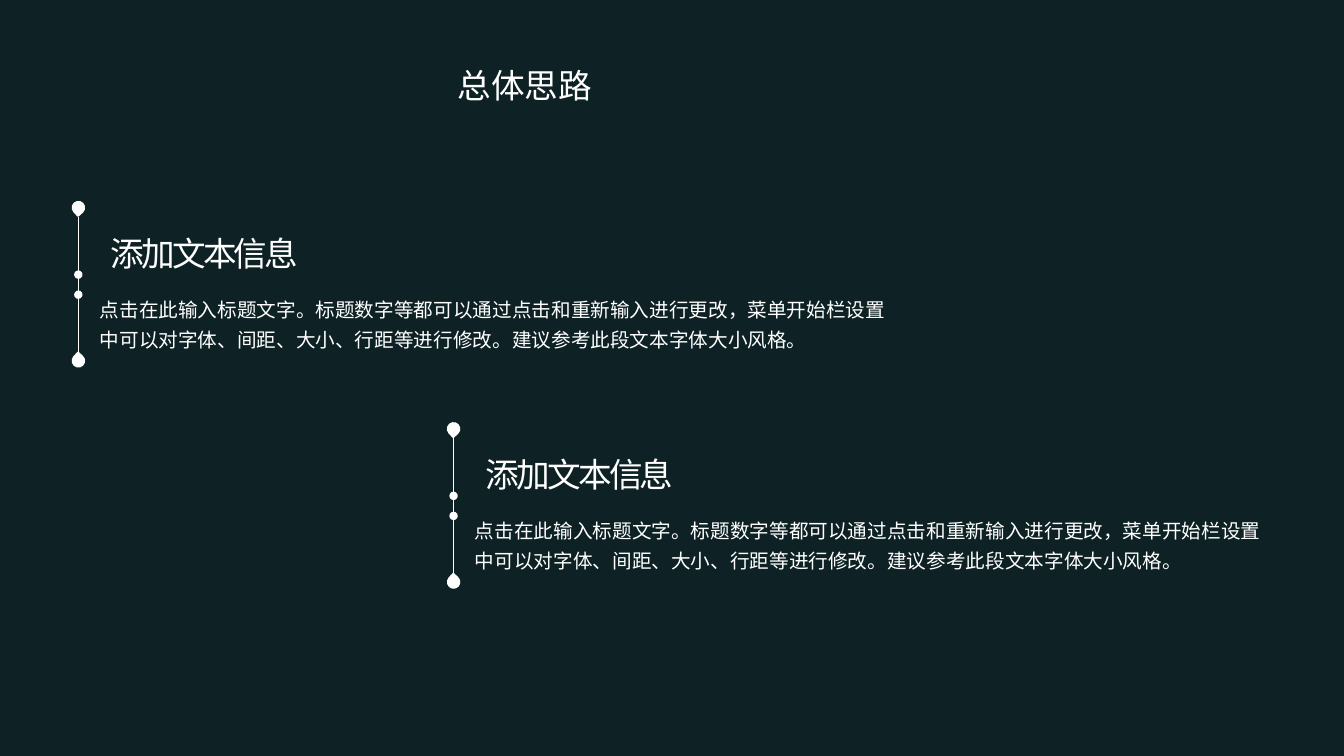
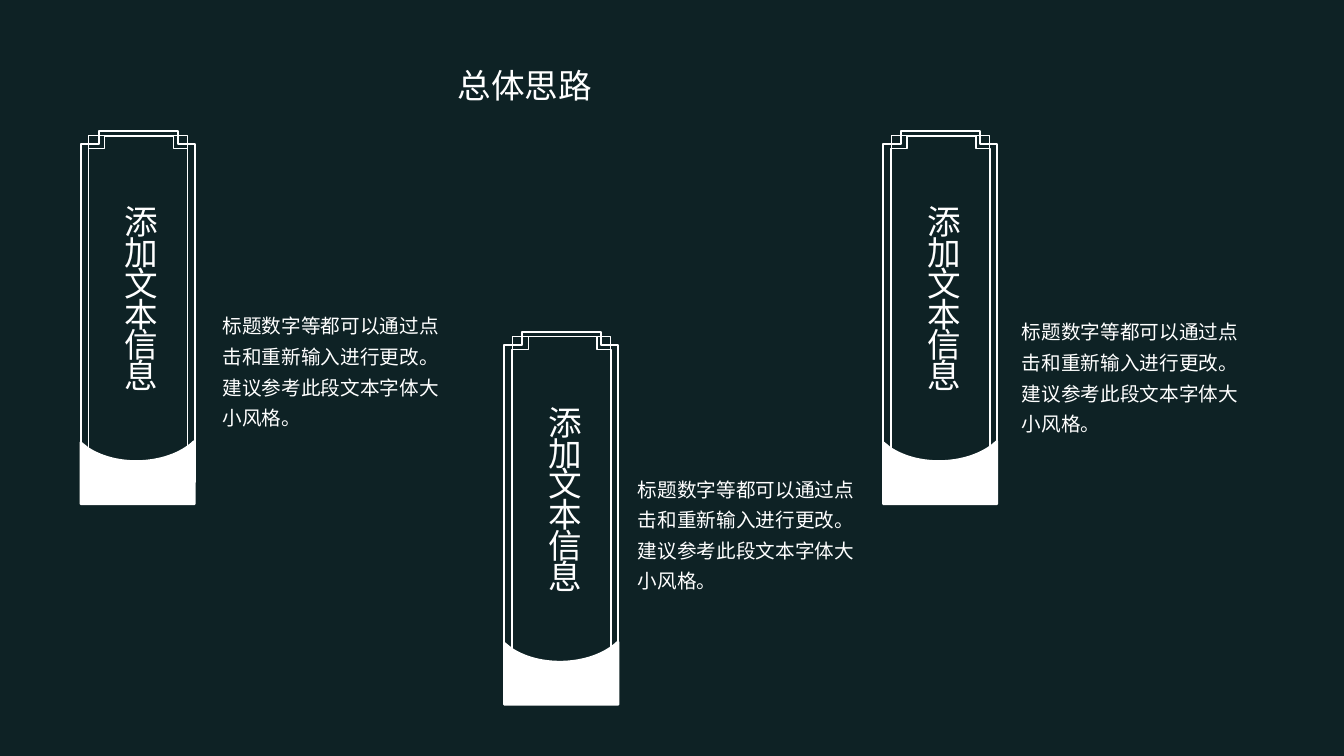
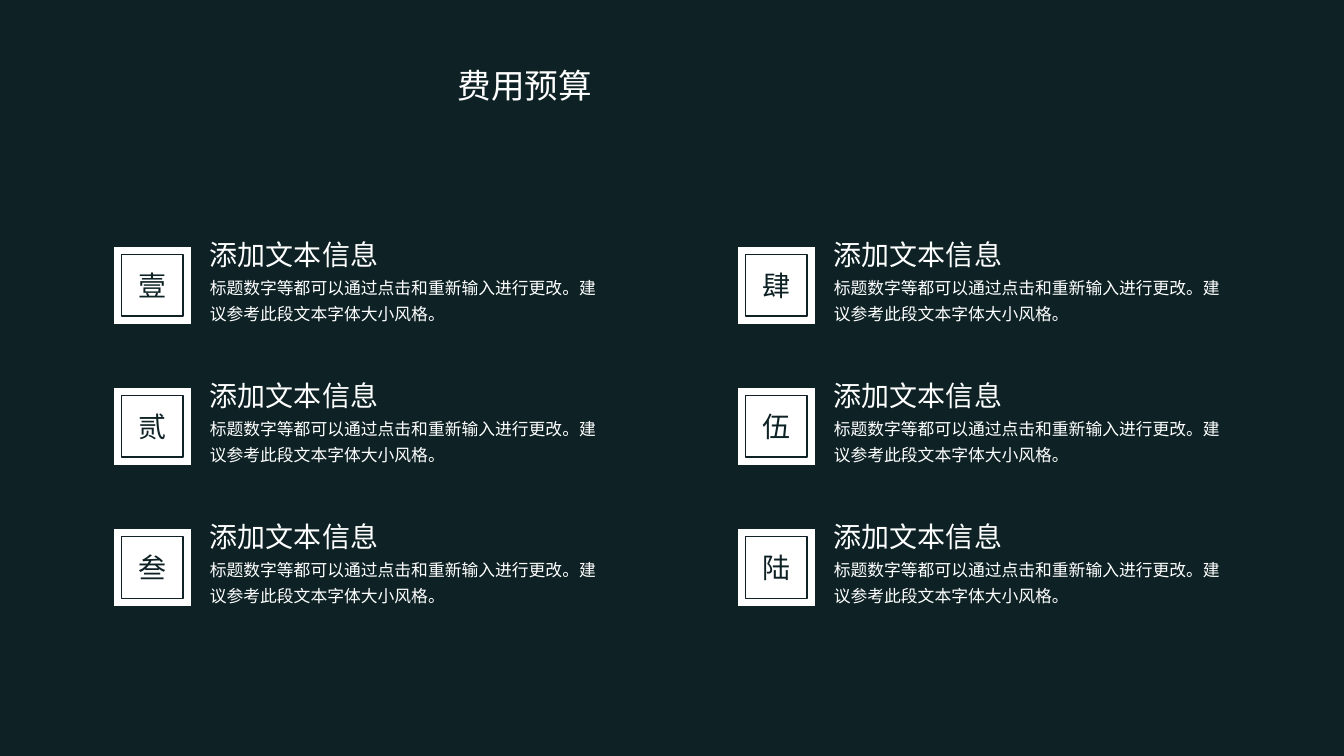
import itertools

import pptx
import pptx.dml.color
import pptx.enum.shapes
import pptx.enum.text
import pptx.oxml
import pptx.oxml.ns
import pptx.util

Pt = pptx.util.Pt
SHAPE = pptx.enum.shapes.MSO_SHAPE
ALIGN = pptx.enum.text.PP_ALIGN
ANCHOR = pptx.enum.text.MSO_ANCHOR
AUTO = pptx.enum.text.MSO_AUTO_SIZE

COLORS = {"night": "0E2225", "white": "FFFFFF"}
HEAD_FONT = "Noto Sans CJK JP"
BODY_FONT = "Noto Sans CJK SC"

HEADING = "添加文本信息"
SHORT_BODY = "标题数字等都可以通过点击和重新输入进行更改。建议参考此段文本字体大小风格。"
LONG_BODY = (
    "点击在此输入标题文字。标题数字等都可以通过点击和重新输入进行更改，"
    "菜单开始栏设置中可以对字体、间距、大小、行距等进行修改。"
    "建议参考此段文本字体大小风格。"
)

IDEAS = {"title": "总体思路", "origins": [(56, 144), (324, 302)]}
PLAQUES = {
    "title": "总体思路",
    "items": [
        ((57.6, 93.6), (152, 216)),
        ((360.2, 236.9), (448.6, 332.6)),
        ((630.9, 93.6), (722.9, 220.3)),
    ],
}
BUDGET = {"title": "费用预算", "columns": ["壹贰叁", "肆伍陆"]}


def rgb(name):
    return pptx.dml.color.RGBColor.from_string(COLORS[name])


def write(sp, text, size, font, color="white", align=None, spacing=None, line_spacing=None):
    p = sp.text_frame.paragraphs[0]
    p.text = text
    p.alignment = align
    p.line_spacing = line_spacing
    p.font.size = Pt(size)
    p.font.name = font
    p.font.color.rgb = rgb(color)
    props = p._p.pPr.find(pptx.oxml.ns.qn("a:defRPr"))
    ea = pptx.oxml.parse_xml(f'<a:ea {pptx.oxml.ns.nsdecls("a")} typeface="{font}"/>')
    props.find(pptx.oxml.ns.qn("a:latin")).addnext(ea)
    if spacing:
        props.set("spc", str(spacing * 100))


def add_text(slide, box, text, size, font, wrap=True, vertical=False, **style):
    sp = slide.shapes.add_textbox(*map(Pt, box))
    tf = sp.text_frame
    tf.word_wrap = wrap
    tf.auto_size = AUTO.SHAPE_TO_FIT_TEXT
    if vertical:
        tf._txBody.bodyPr.set("vert", "eaVert")
    write(sp, text, size, font, **style)


def paint(sp, fill, line, width):
    sp.shadow.inherit = False
    if fill:
        sp.fill.solid()
        sp.fill.fore_color.rgb = rgb(fill)
    else:
        sp.fill.background()
    sp.line.color.rgb = rgb(line)
    sp.line.width = Pt(width)


def add_shape(slide, kind, box, fill="white", line="white", width=1, rotation=0):
    sp = slide.shapes.add_shape(kind, *map(Pt, box))
    sp.rotation = rotation
    paint(sp, fill, line, width)
    return sp


def add_outline(slide, points, fill, width):
    points = [(Pt(x), Pt(y)) for x, y in points]
    builder = slide.shapes.build_freeform(*points[0])
    builder.add_line_segments(points[1:], close=True)
    paint(builder.convert_to_shape(), fill, "white", width)


def add_slide(prs, title):
    slide = prs.slides.add_slide(prs.slide_layouts.get_by_name("Title Only"))
    tf = slide.shapes.title.text_frame
    tf.vertical_anchor = ANCHOR.TOP
    tf.auto_size = AUTO.NONE
    write(slide.shapes.title, title, 24, HEAD_FONT, align=ALIGN.JUSTIFY)
    return slide


def add_idea(slide, x, y):
    for dy, rotation in ((0, 137.4), (109.4, 312.6)):
        add_shape(slide, SHAPE.TEAR, (x - 4.32, y + dy, 8.64, 8.64), rotation=rotation)
    for dy in (49.7, 64):
        add_shape(slide, SHAPE.OVAL, (x - 2.5, y + dy, 5, 5))
    rod = slide.shapes.add_connector(
        pptx.enum.shapes.MSO_CONNECTOR.STRAIGHT, Pt(x), Pt(y + 10.8), Pt(x), Pt(y + 107.3)
    )
    rod.line.color.rgb = rgb("white")
    rod.line.width = Pt(0.5)
    rod._element.spPr.append(
        pptx.oxml.parse_xml(f'<a:effectLst {pptx.oxml.ns.nsdecls("a")}/>')
    )
    add_text(slide, (x + 8.2, y + 60, 576, 49.7), LONG_BODY, 14, BODY_FONT, line_spacing=1.3)
    add_text(slide, (x + 16, y + 18.5, 150, 36), HEADING, 24, HEAD_FONT, spacing=-2)


def notched(x, y, w, h, left, right, drop):
    r, b = x + w, y + h
    return [
        (r, y + drop), (r, b - drop), (r - right, b - drop), (r - right, b),
        (x + left, b), (x + left, b - drop), (x, b - drop), (x, y + drop),
        (x + left, y + drop), (x + left, y), (r - right, y), (r - right, y + drop),
    ]


def bezier(a, b, c, d, steps=16):
    for t in (i / steps for i in range(steps + 1)):
        u = 1 - t
        yield tuple(
            u**3 * p + 3 * u * u * t * q + 3 * u * t * t * r + t**3 * s
            for p, q, r, s in zip(a, b, c, d)
        )


def add_plaque(slide, x, y):
    w, h = 81.4, 260
    inner = (x + 5.6, y + 3.5, w - 10.8, h - 7)
    add_outline(slide, notched(x, y, w, h, 13, 12, 9.4), None, 1.5)
    add_shape(slide, SHAPE.RECTANGLE, inner, fill=None, width=0.75)
    add_outline(slide, notched(*inner, 11.5, 10, 9.2), None, 1)
    base = [(w, 0), (w, 44.8), (0, 44.8), (0, 0.8)]
    base += bezier((5, 4.8), (13.7, 10.6), (25.9, 14.3), (39.6, 14.3))
    base += bezier((39.6, 14.3), (56.9, 14.3), (72, 8.6), (80.6, 0.4))
    add_outline(slide, [(x + dx, y + 221.6 + dy) for dx, dy in base], "white", 1.5)
    add_text(slide, (x + 16.6, y + 45.8, 44, 140.4), HEADING, 24, HEAD_FONT,
             wrap=False, vertical=True, spacing=-2)


def add_budget_item(slide, x, y, numeral):
    add_shape(slide, SHAPE.RECTANGLE, (x, y, 56, 56), line="night")
    tile = add_shape(slide, SHAPE.RECTANGLE, (x + 6, y + 6, 44, 44), line="night")
    tile.text_frame.vertical_anchor = ANCHOR.MIDDLE
    write(tile, numeral, 20, HEAD_FONT, color="night", align=ALIGN.CENTER)
    add_text(slide, (x + 62, y - 10, 135.4, 31.7), HEADING, 20, HEAD_FONT, wrap=False)
    add_text(slide, (x + 62, y + 14.4, 296.6, 43.2), SHORT_BODY, 12, BODY_FONT, line_spacing=1.3)


def main():
    prs = pptx.Presentation()
    prs.slide_width, prs.slide_height = Pt(960), Pt(540)
    fill = prs.slide_master.background.fill
    fill.solid()
    fill.fore_color.rgb = rgb("night")
    title = prs.slide_layouts.get_by_name("Title Only").placeholders[0]
    title.left, title.top, title.width, title.height = map(Pt, (319.7, 42.5, 320.4, 36))

    slide = add_slide(prs, IDEAS["title"])
    for x, y in IDEAS["origins"]:
        add_idea(slide, x, y)

    slide = add_slide(prs, PLAQUES["title"])
    for plaque, note in PLAQUES["items"]:
        add_plaque(slide, *plaque)
        add_text(slide, (*note, 179.3, 93.6), SHORT_BODY, 14, BODY_FONT, line_spacing=1.3)

    slide = add_slide(prs, BUDGET["title"])
    for col, row in itertools.product(range(2), range(3)):
        add_budget_item(slide, 80.8 + 445.7 * col, 175.8 + 100.8 * row,
                        BUDGET["columns"][col][row])

    prs.save("out.pptx")


if __name__ == "__main__":
    main()
